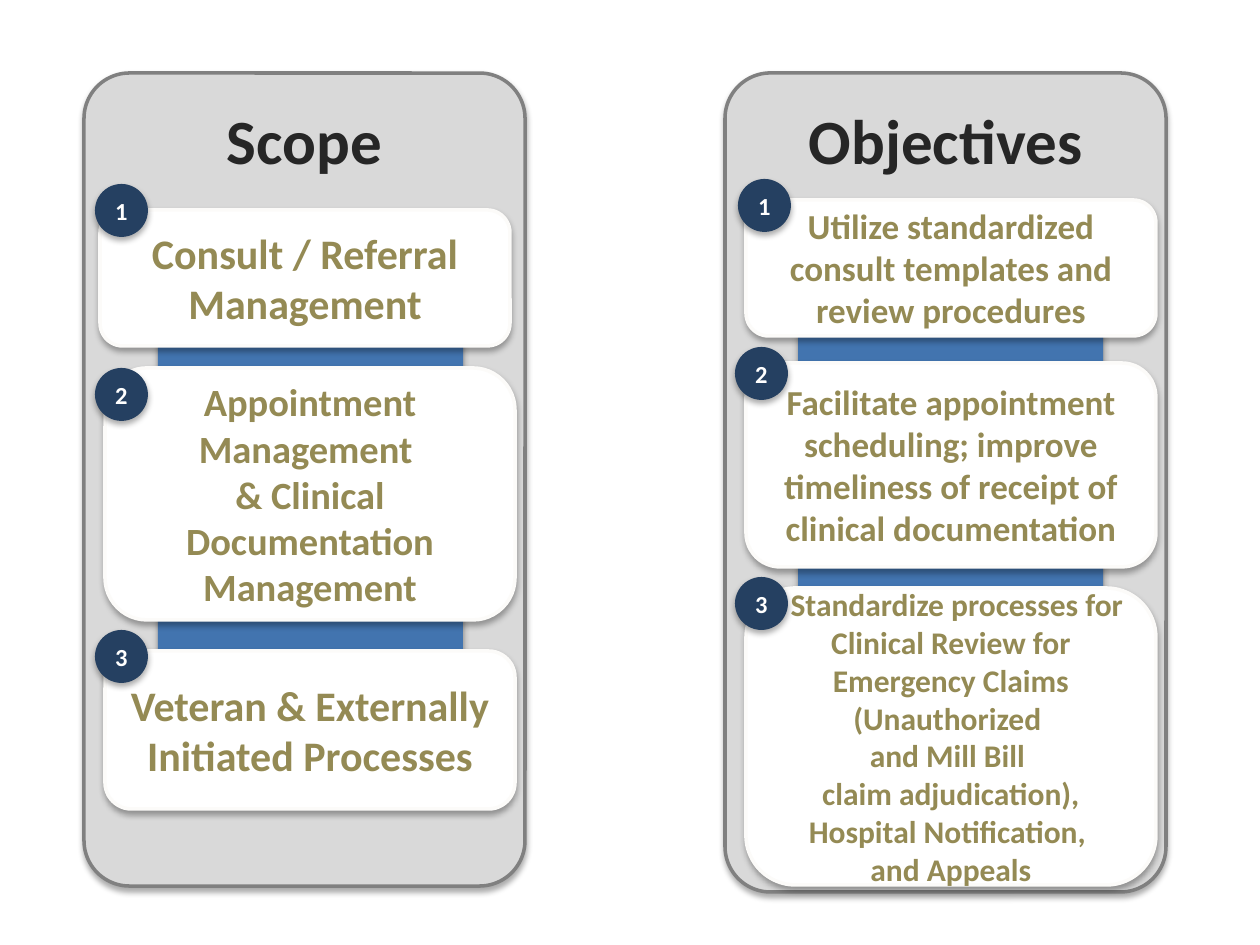
from dataclasses import dataclass

from lxml.etree import SubElement
from pptx import Presentation
from pptx.dml.color import RGBColor
from pptx.enum.shapes import MSO_SHAPE
from pptx.enum.text import MSO_ANCHOR, MSO_AUTO_SIZE, PP_ALIGN
from pptx.oxml.ns import qn
from pptx.util import Pt

SCALE = 914400 / 126  # EMU per px


@dataclass(frozen=True)
class Theme:
    font: str = "Calibri"
    panel: str = "D9D9D9"
    panel_line: str = "808080"
    bar: str = "4274AF"
    card: str = "FFFFFF"
    card_line: str = "FCFBF9"
    card_text: str = "948A54"
    badge: str = "254061"
    badge_text: str = "FFFFFF"
    title: str = "262626"
    shadow: str = "000000"
    title_size: int = 36
    badge_size: int = 14
    line_width: int = 2
    panel_corner: float = 0.103


T = Theme()
CARD_W, BADGE_D = 410, 53

# Boxes are (left, top, width, height) in px as seen on the slide.
# Cards: left, top, height, badge corner, type size, first-line indent, paragraphs
COLUMNS = [
    {
        "title": "Objectives",
        "panel": (725, 73, 441, 819),
        "bar": (798, 262, 305, 557),
        "title_box": (746, 95, 399, 89),
        "cards": [
            (746, 200, 136, (738, 179), 20, 0,
             ["Utilize standardized consult templates and review procedures"]),
            (746, 363, 204, (735, 347), 20, 0,
             ["Facilitate appointment scheduling; improve timeliness of "
              "receipt of clinical documentation"]),
            (746, 588, 297, (735, 577), 18, 12,
             ["Standardize processes for Clinical Review for Emergency Claims",
              "(Unauthorized ",
              "and Mill Bill \nclaim adjudication), Hospital Notification, ",
              "and Appeals"]),
        ],
    },
    {
        "title": "Scope",
        "panel": (84, 73, 441, 813),
        "bar": (158, 268, 305, 509),
        "title_box": (105, 95, 399, 89),
        "cards": [
            (100, 210, 136, (95, 184), 24, 0,
             ["Consult / Referral Management"]),
            (105, 368, 252, (95, 368), 22, 0,
             ["Appointment Management \n& Clinical Documentation Management"]),
            (105, 651, 158, (95, 630), 24, 0,
             ["Veteran & Externally Initiated Processes"]),
        ],
    },
]


def px(*values):
    return [round(v * SCALE) for v in values]


def add_shadow(sp):
    sp.shadow.inherit = False
    effects = sp._element.spPr.find(qn("a:effectLst"))
    outer = SubElement(effects, qn("a:outerShdw"), blurRad=str(Pt(3.5)),
                       dist=str(Pt(2.2)), dir="5400000", rotWithShape="0")
    color = SubElement(outer, qn("a:srgbClr"), val=T.shadow)
    SubElement(color, qn("a:alpha"), val="32000")


def add_box(slide, kind, box, fill, line=None):
    sp = slide.shapes.add_shape(kind, *px(*box))
    sp.fill.solid()
    sp.fill.fore_color.rgb = RGBColor.from_string(fill)
    if line:
        sp.line.color.rgb = RGBColor.from_string(line)
        sp.line.width = Pt(T.line_width)
    else:
        sp.line.fill.background()
    add_shadow(sp)
    return sp


def add_turned_box(slide, box, fill, line=None):
    """Rounded box turned by 90 degrees that covers the given area."""
    x, y, w, h = box
    shift = (h - w) / 2
    sp = add_box(slide, MSO_SHAPE.ROUNDED_RECTANGLE,
                 (x - shift, y + shift, h, w), fill, line)
    sp.rotation = 90
    return sp


def write(sp, paragraphs, size, color, indent=0):
    tf = sp.text_frame
    tf.word_wrap = True
    for i, text in enumerate(paragraphs):
        p = tf.paragraphs[0] if i == 0 else tf.add_paragraph()
        p.alignment = PP_ALIGN.CENTER
        if indent and i == 0:
            pPr = p._p.get_or_add_pPr()
            pPr.set("marL", "0")
            pPr.set("indent", str(px(indent)[0]))
        for j, part in enumerate(text.split("\n")):
            if j:
                p.add_line_break()
            r = p.add_run()
            r.text = part
            r.font.name = T.font
            r.font.size = Pt(size)
            r.font.bold = True
            r.font.color.rgb = RGBColor.from_string(color)
        p.font.size = Pt(size)
    return tf


def add_column(slide, column):
    panel = add_turned_box(slide, column["panel"], T.panel, T.panel_line)
    panel.adjustments[0] = T.panel_corner
    add_turned_box(slide, column["bar"], T.bar)

    title = slide.shapes.add_textbox(*px(*column["title_box"]))
    tf = write(title, [column["title"]], T.title_size, T.title)
    tf.auto_size = MSO_AUTO_SIZE.SHAPE_TO_FIT_TEXT

    for number, card in enumerate(column["cards"], 1):
        x, y, h, corner, size, indent, paragraphs = card
        sp = add_box(slide, MSO_SHAPE.ROUNDED_RECTANGLE, (x, y, CARD_W, h),
                     T.card, T.card_line)
        tf = write(sp, paragraphs, size, T.card_text, indent)
        tf.vertical_anchor = MSO_ANCHOR.MIDDLE

        badge = add_box(slide, MSO_SHAPE.FLOWCHART_CONNECTOR,
                        (*corner, BADGE_D, BADGE_D), T.badge)
        tf = write(badge, [str(number)], T.badge_size, T.badge_text)
        tf.vertical_anchor = MSO_ANCHOR.MIDDLE


def main():
    prs = Presentation()
    prs.slide_width, prs.slide_height = px(1260, 945)
    slide = prs.slides.add_slide(prs.slide_layouts[6])
    for column in COLUMNS:
        add_column(slide, column)
    prs.save("out.pptx")


if __name__ == "__main__":
    main()
